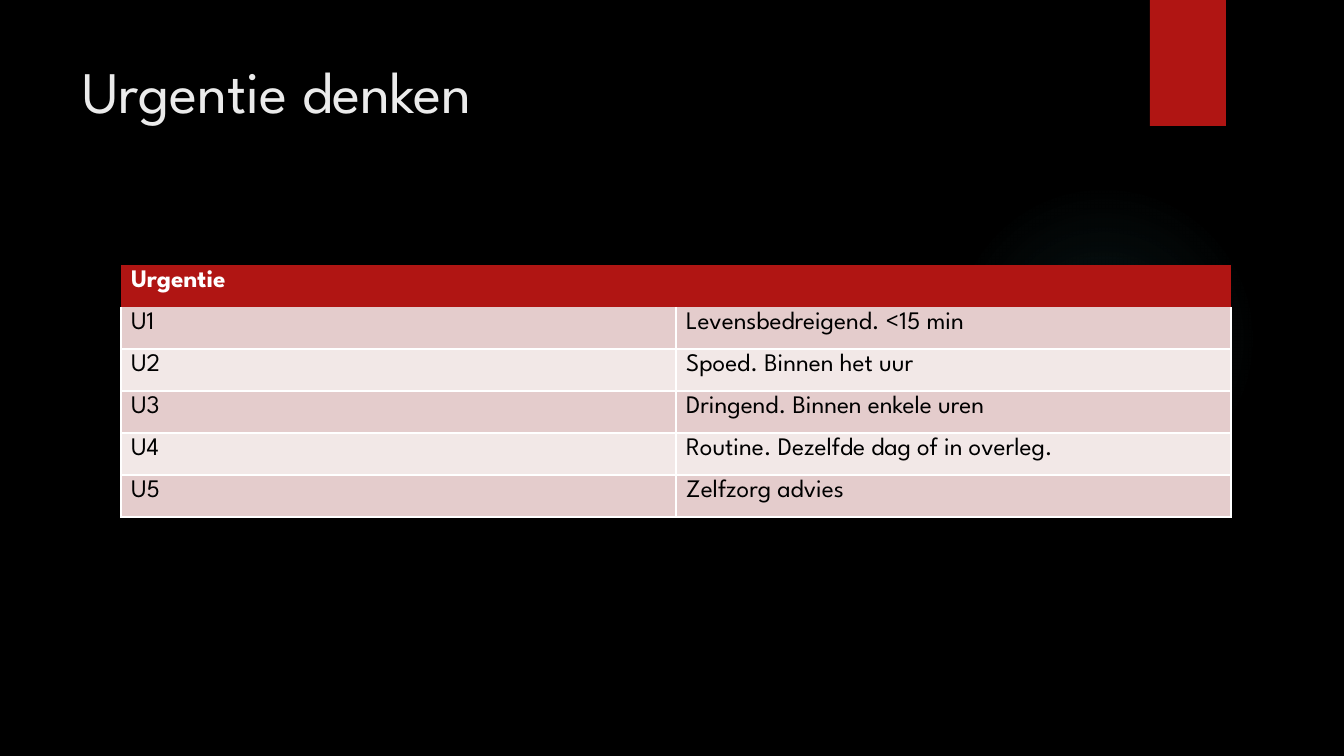
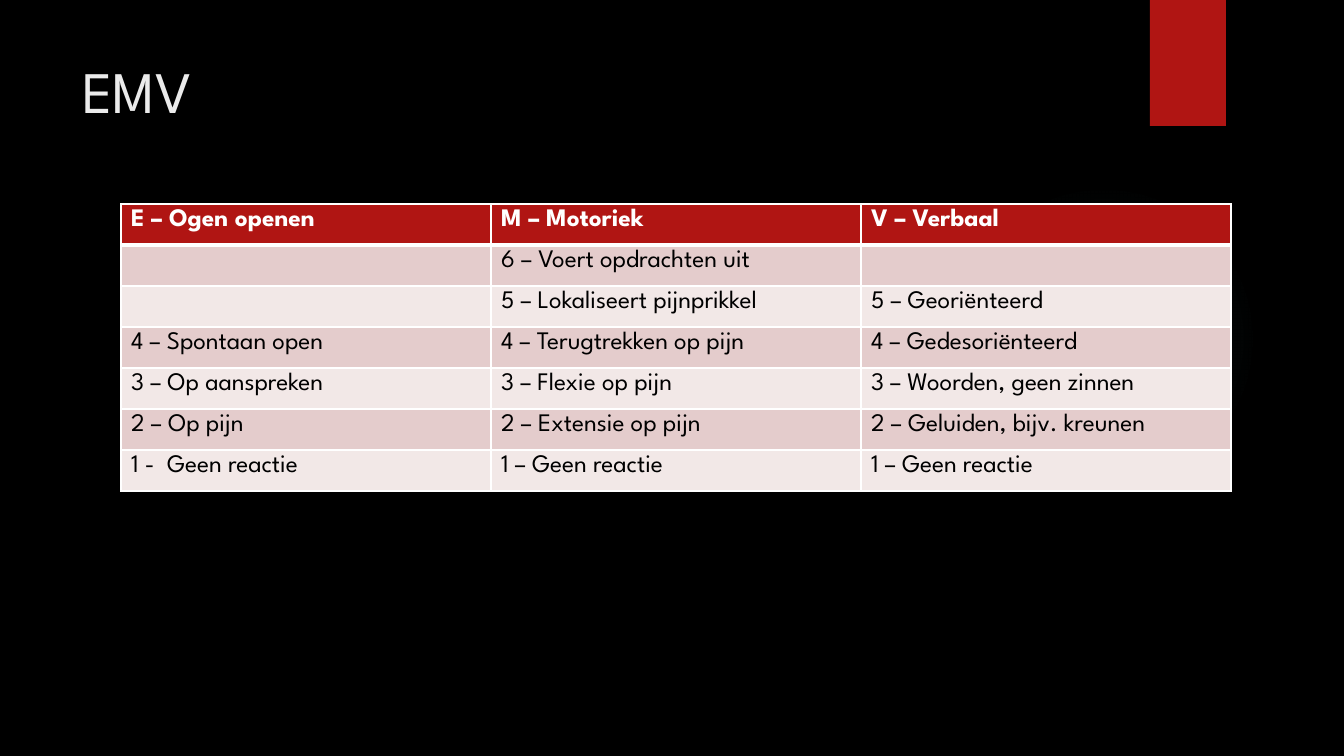
from pptx import Presentation
from pptx.dml.color import RGBColor
from pptx.enum.shapes import MSO_SHAPE
from pptx.enum.text import MSO_ANCHOR, PP_ALIGN
from pptx.oxml import parse_xml
from pptx.oxml.ns import nsdecls, qn
from pptx.util import Pt

PX = 63500 / 7  # EMU in one px, 1344 px across the slide
FONT = "League Spartan"
BLACK = RGBColor(0x00, 0x00, 0x00)
WHITE = RGBColor(0xFF, 0xFF, 0xFF)
TITLE = RGBColor(0xEB, 0xEB, 0xEB)
RED = RGBColor(0xB0, 0x15, 0x13)
ROSE = RGBColor(0xE4, 0xCC, 0xCC)
PALE = RGBColor(0xF2, 0xE8, 0xE7)
TEAL = RGBColor(0x50, 0xB9, 0xC1)

# Each table: title, left, top, column width, row height, header lines, rows
# Header lines are widths in pt for left, right, top, bottom
TABLES = [
    ("Urgentie denken", 121, 265, 555, 42, (0, 0, 0, 0), [
        ("Urgentie", ""),
        ("U1", "Levensbedreigend. <15 min"),
        ("U2", "Spoed. Binnen het uur"),
        ("U3", "Dringend. Binnen enkele uren"),
        ("U4", "Routine. Dezelfde dag of in overleg."),
        ("U5", "Zelfzorg advies"),
    ]),
    ("EMV", 121, 204, 370, 41, (1, 1, 1, 3), [
        ("E – Ogen openen", "M – Motoriek", "V – Verbaal"),
        ("", "6 – Voert opdrachten uit", ""),
        ("", "5 – Lokaliseert pijnprikkel", "5 – Georiënteerd"),
        ("4 – Spontaan open", "4 – Terugtrekken op pijn", "4 – Gedesoriënteerd"),
        ("3 – Op aanspreken", "3 – Flexie op pijn", "3 – Woorden, geen zinnen"),
        ("2 – Op pijn", "2 – Extensie op pijn", "2 – Geluiden, bijv. kreunen"),
        ("1 -  Geen reactie", "1 – Geen reactie", "1 – Geen reactie"),
    ]),
]


def px(*lengths):
    return [round(n * PX) for n in lengths]


def add_run(p, text, size, color, bold=False):
    r = p.add_run()
    r.text = text
    r.font.name, r.font.size, r.font.bold = FONT, Pt(size), bold
    r.font.color.rgb = color


prs = Presentation()
prs.slide_width, prs.slide_height = px(1344, 756)
layout = prs.slide_layouts[5]  # Title Only
bg = prs.slide_master.background.fill
bg.solid()
bg.fore_color.rgb = BLACK

# Title place, shared through the layout
title = layout.placeholders[0]
title.left, title.top, title.width, title.height = px(72, 50, 1037, 154)

for number, (heading, left, top, col_w, row_h, head_lines, rows) in enumerate(TABLES):
    s = prs.slides.add_slide(layout)

    # Glow and red band, drawn once and moved to the layout
    if number == 0:
        glow = s.shapes.add_shape(MSO_SHAPE.OVAL, *px(949, 184, 310, 310))
        band = s.shapes.add_shape(MSO_SHAPE.RECTANGLE, *px(1150, 0, 76, 126))
        for sp in (glow, band):
            sp.line.fill.background()
            sp.shadow.inherit = False
            layout.shapes.element.append(sp.element)
        stops = "".join(
            f'<a:gs pos="{pos}000"><a:srgbClr val="{TEAL}"><a:alpha val="{alpha}000"/>'
            "</a:srgbClr></a:gs>" for pos, alpha in ((0, 7), (36, 6), (69, 0)))
        glow.element.spPr.insert(2, parse_xml(
            f'<a:gradFill {nsdecls("a")} rotWithShape="1"><a:gsLst>{stops}</a:gsLst>'
            '<a:path path="circle"><a:fillToRect l="50000" t="50000" r="50000" b="50000"/>'
            "</a:path></a:gradFill>"))
        band.fill.solid()
        band.fill.fore_color.rgb = RED
        band.element.spPr.find(qn("a:effectLst")).append(parse_xml(
            f'<a:outerShdw {nsdecls("a")} blurRad="{Pt(3)}" dist="{Pt(2)}" dir="5400000">'
            f'<a:srgbClr val="{BLACK}"><a:alpha val="45000"/></a:srgbClr></a:outerShdw>'))

    # Title
    tf = s.shapes.title.text_frame
    tf.vertical_anchor = MSO_ANCHOR.TOP
    tf.paragraphs[0].alignment = PP_ALIGN.LEFT
    add_run(tf.paragraphs[0], heading, 42, TITLE)

    # Table
    n_rows, n_cols = len(rows), len(rows[0])
    table = s.shapes.add_table(
        n_rows, n_cols, *px(left, top, col_w * n_cols, row_h * n_rows)).table
    table.horz_banding = False
    for col in table.columns:
        col.width = px(col_w)[0]
    for i, texts in enumerate(rows):
        table.rows[i].height = px(row_h)[0]
        is_head = i == 0
        # The line under the header belongs to the header row
        lines = head_lines if is_head else (1, 1, head_lines[3] if i == 1 else 1, 1)
        for j, text in enumerate(texts):
            cell = table.cell(i, j)
            cell.fill.solid()
            cell.fill.fore_color.rgb = RED if is_head else (PALE, ROSE)[i % 2]
            if text:
                add_run(cell.text_frame.paragraphs[0], text, 18,
                        WHITE if is_head else BLACK, is_head)
            tc_pr = cell._tc.get_or_add_tcPr()
            for k, (side, width) in enumerate(zip("LRTB", lines)):
                paint = (f'<a:solidFill><a:srgbClr val="{WHITE}"/></a:solidFill>'
                         if width else "<a:noFill/>")
                tc_pr.insert(k, parse_xml(
                    f'<a:ln{side} {nsdecls("a")} w="{Pt(width)}">{paint}</a:ln{side}>'))

prs.save("out.pptx")
